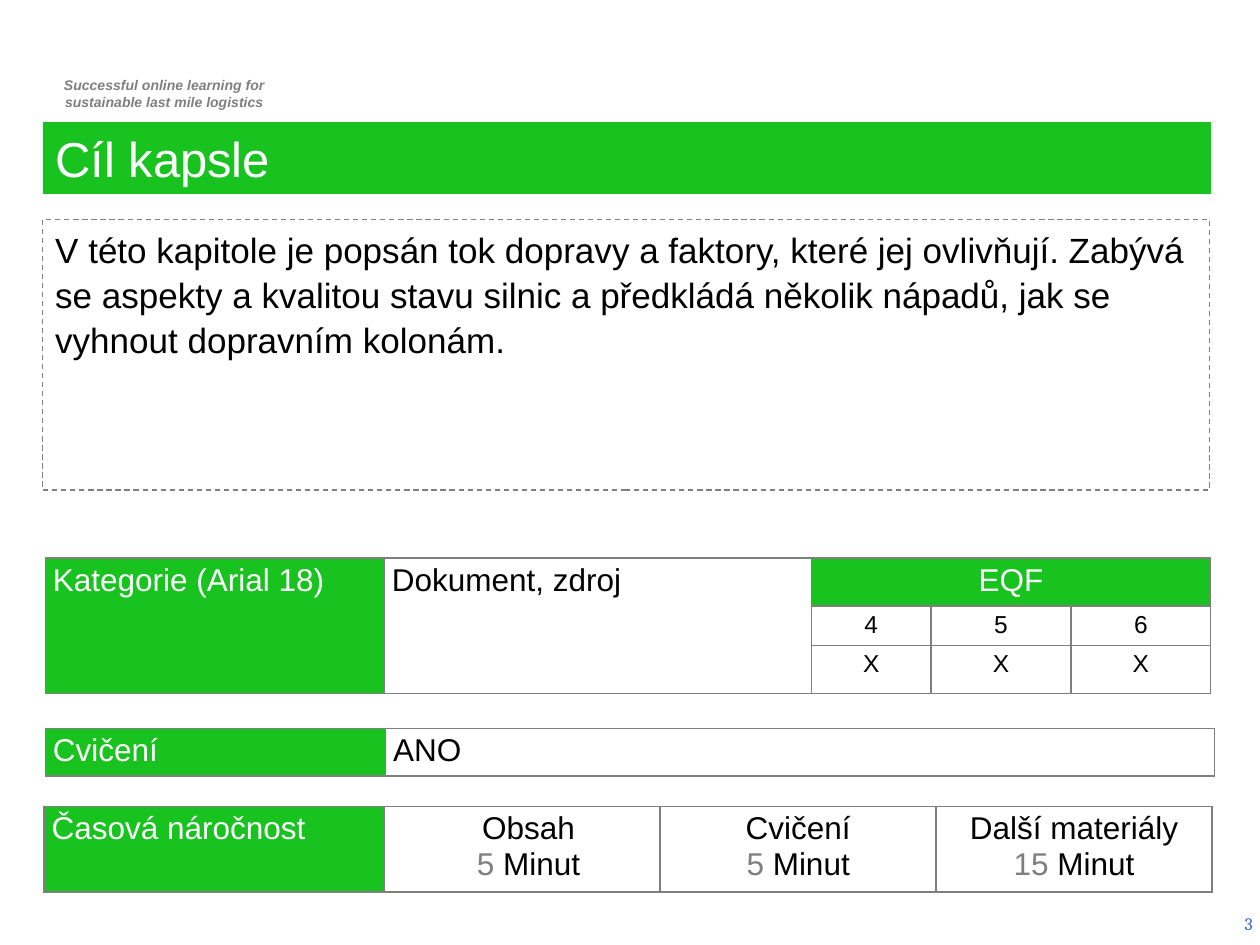
"""Build the capsule goal slide with its category, exercise and time tables."""
from dataclasses import dataclass

from lxml.etree import SubElement
from pptx import Presentation
from pptx.dml.color import RGBColor as RGB
from pptx.enum.dml import MSO_LINE
from pptx.enum.shapes import MSO_SHAPE as SHAPE
from pptx.enum.text import MSO_ANCHOR as ANCHOR, PP_ALIGN as AL
from pptx.oxml.ns import qn
from pptx.util import Inches, Pt


@dataclass(frozen=True)
class Theme:
    font: str = "Arial"
    number_font: str = "Cambria"
    green: str = "18C320"
    grey: str = "7F7F7F"
    blue: str = "3366CC"
    white: str = "FFFFFF"
    black: str = "000000"
    title: int = 28
    body: int = 20
    table: int = 18
    level: int = 14
    number: int = 10
    tagline: int = 8
    border: int = 1
    outline: float = 0.75


T = Theme()

TAGLINE = ["Successful online learning for", "sustainable last mile logistics"]
TITLE = "Cíl kapsle"
GOAL = ("V této kapitole je popsán tok dopravy a faktory, které jej ovlivňují. "
        "Zabývá se aspekty a kvalitou stavu silnic a předkládá několik nápadů, "
        "jak se vyhnout dopravním kolonám.")
PAGE = "3"
CATEGORY = ("Kategorie (Arial 18)", "Dokument, zdroj")
EQF = "EQF"
LEVELS = [("4", "X"), ("5", "X"), ("6", "X")]
EXERCISE = ("Cvičení", "ANO")
TIME = "Časová náročnost"
TIMES = [("Obsah", "5"), ("Cvičení", "5"), ("Další materiály", "15")]
UNIT = " Minut"


def style(p, size, color, align=AL.LEFT, font=T.font):
    p.alignment = align
    p.font.name, p.font.size = font, Pt(size)
    p.font.color.rgb = RGB.from_string(color)


def write(tf, lines, *look, **options):
    tf.word_wrap = True
    for i, line in enumerate(lines):
        p = tf.paragraphs[0] if i == 0 else tf.add_paragraph()
        p.text = line
        style(p, *look, **options)
    return tf


def add_text(s, box, lines, *look, anchor=ANCHOR.TOP, **options):
    sp = s.shapes.add_textbox(*map(Inches, box))
    sp.text_frame.vertical_anchor = anchor
    return write(sp.text_frame, lines, *look, **options)


def add_box(s, box, text, *look):
    sp = s.shapes.add_shape(SHAPE.RECTANGLE, *map(Inches, box))
    sp.shadow.inherit = False
    sp.fill.background()
    sp.line.fill.background()
    sp.text_frame.vertical_anchor = ANCHOR.TOP
    write(sp.text_frame, [text], *look)
    return sp


def set_borders(cell):
    tc_pr = cell._tc.get_or_add_tcPr()
    for i, side in enumerate(("lnL", "lnR", "lnT", "lnB")):
        ln = tc_pr.makeelement(qn(f"a:{side}"), {"w": str(Pt(T.border))})
        fill = SubElement(ln, qn("a:solidFill"))
        SubElement(fill, qn("a:srgbClr"), val=T.grey)
        tc_pr.insert(i, ln)


def add_table(s, left, top, cols, rows):
    table = s.shapes.add_table(len(rows), len(cols), Inches(left), Inches(top),
                               Inches(sum(cols)), Inches(sum(rows))).table
    table.first_row = table.horz_banding = False
    for col, width in zip(table.columns, cols):
        col.width = Inches(width)
    for row, height in zip(table.rows, rows):
        row.height = Inches(height)
    for cell in table.iter_cells():
        cell.margin_left = cell.margin_right = Inches(0.06)
        cell.margin_top = cell.margin_bottom = Inches(0.04)
        cell.fill.background()
        set_borders(cell)
    return table


def fill_cell(cell, text, size=T.table, align=AL.JUSTIFY, head=False):
    write(cell.text_frame, [text], size, T.white if head else T.black, align)
    if head:
        cell.fill.solid()
        cell.fill.fore_color.rgb = RGB.from_string(T.green)


def add_category(s):
    table = add_table(s, 0.36, 4.43, [2.69, 3.39, 0.95, 1.11, 1.11],
                      [0.37, 0.31, 0.37])
    for c, text in enumerate(CATEGORY):
        table.cell(0, c).merge(table.cell(2, c))
        fill_cell(table.cell(0, c), text, head=c == 0)
    table.cell(0, 2).merge(table.cell(0, 4))
    fill_cell(table.cell(0, 2), EQF, align=AL.CENTER, head=True)
    for c, pair in enumerate(LEVELS, 2):
        for r, text in enumerate(pair, 1):
            fill_cell(table.cell(r, c), text, T.level, AL.CENTER)


def add_exercise(s):
    table = add_table(s, 0.36, 5.78, [2.7, 6.58], [0.37])
    for c, text in enumerate(EXERCISE):
        fill_cell(table.cell(0, c), text, head=c == 0)


def add_times(s):
    table = add_table(s, 0.35, 6.4, [2.7] + [2.19] * 3, [0.67])
    fill_cell(table.cell(0, 0), TIME, head=True)
    for c, (name, minutes) in enumerate(TIMES, 1):
        cell = table.cell(0, c)
        fill_cell(cell, name, align=AL.CENTER)
        p = cell.text_frame.add_paragraph()
        style(p, T.table, T.black, AL.CENTER)
        r = p.add_run()
        r.text = minutes
        r.font.color.rgb = RGB.from_string(T.grey)
        p.add_run().text = UNIT
    table.cell(0, 1).margin_left = Inches(0.16)


def main():
    prs = Presentation()
    prs.slide_width, prs.slide_height = Inches(10), Inches(7.5)
    s = prs.slides.add_slide(prs.slide_layouts[6])
    tf = add_text(s, (0.29, 0.56, 2.03, 0.37), TAGLINE, T.tagline, T.grey, AL.CENTER)
    for p in tf.paragraphs:
        p.font.bold = p.font.italic = True
    add_text(s, (7.71, 7.13, 2.33, 0.4), [PAGE], T.number, T.blue, AL.RIGHT,
             anchor=ANCHOR.MIDDLE, font=T.number_font)
    sp = add_box(s, (0.34, 0.97, 9.27, 0.57), TITLE, T.title, T.white)
    sp.fill.solid()
    sp.fill.fore_color.rgb = RGB.from_string(T.green)
    sp = add_box(s, (0.34, 1.74, 9.26, 2.15), GOAL, T.body, T.black)
    sp.text_frame.paragraphs[0].line_spacing = 1.07
    sp.line.color.rgb = RGB.from_string(T.grey)
    sp.line.width = Pt(T.outline)
    sp.line.dash_style = MSO_LINE.DASH
    add_category(s)
    add_exercise(s)
    add_times(s)
    prs.save("out.pptx")


if __name__ == "__main__":
    main()
